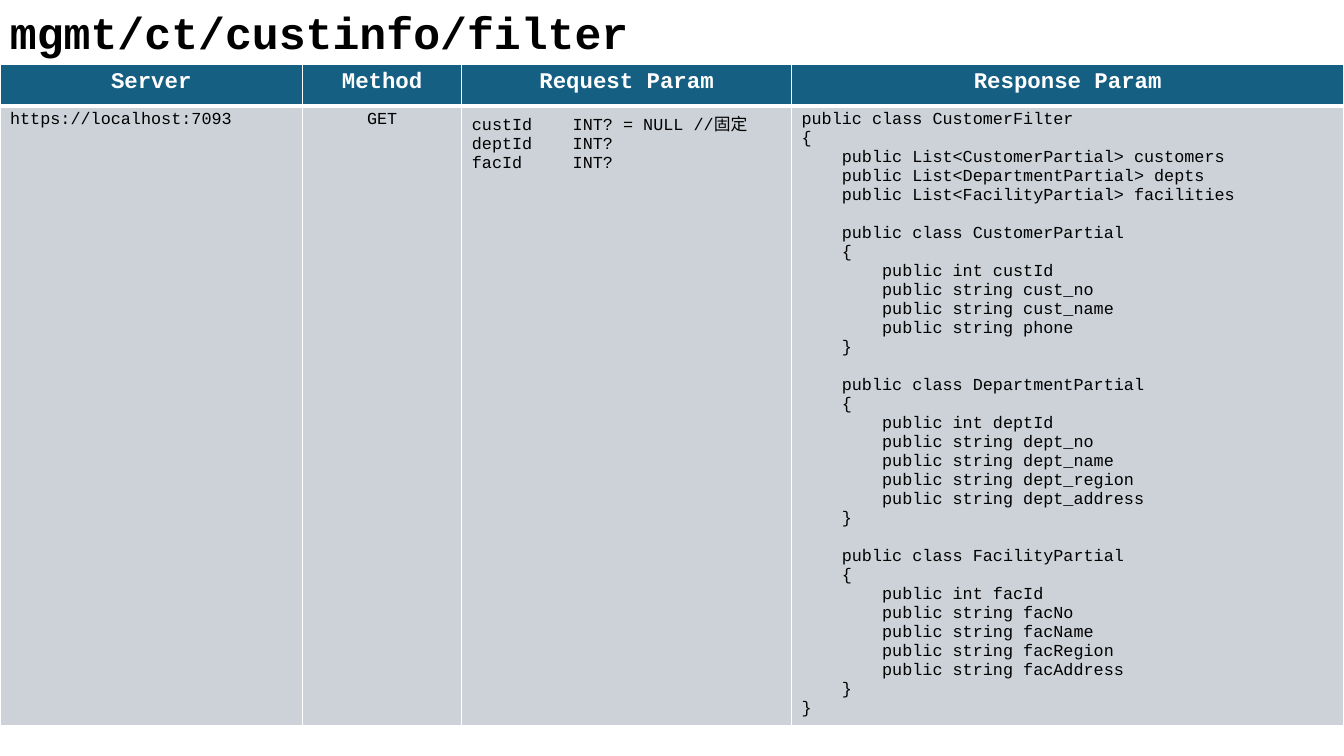
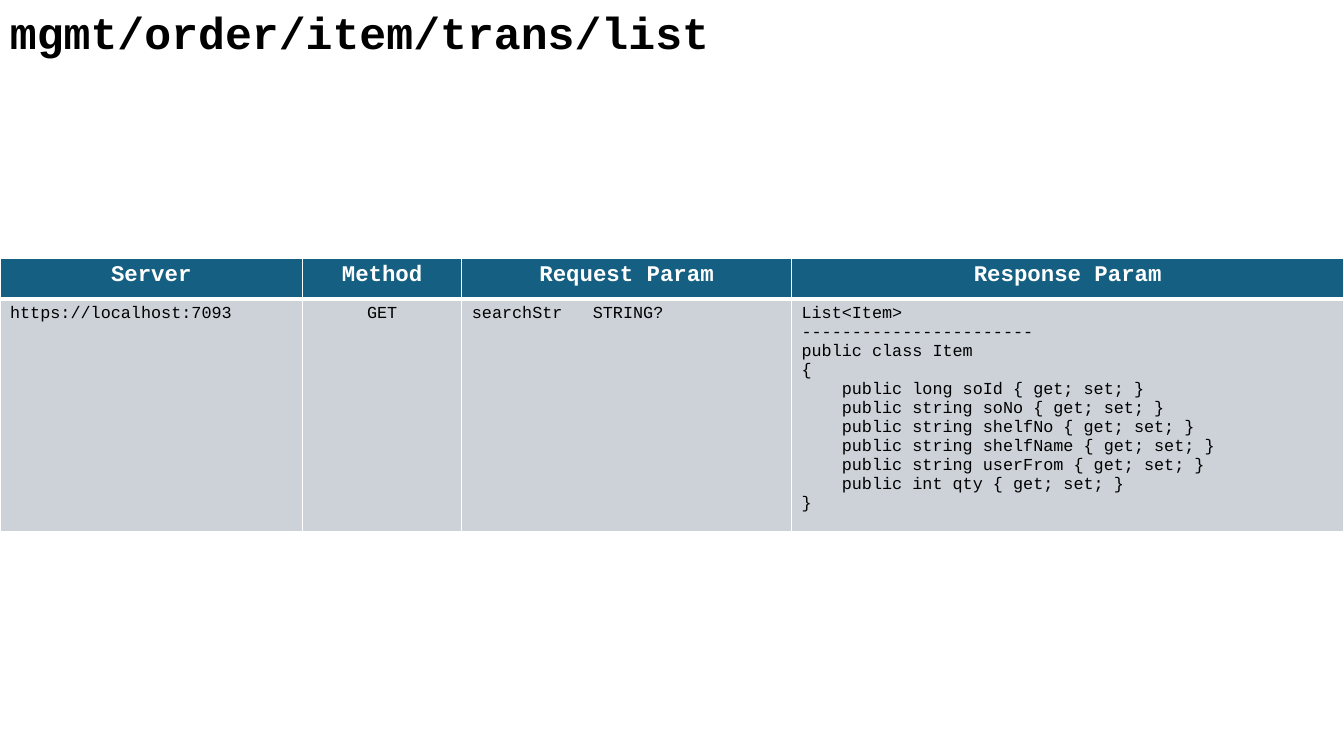
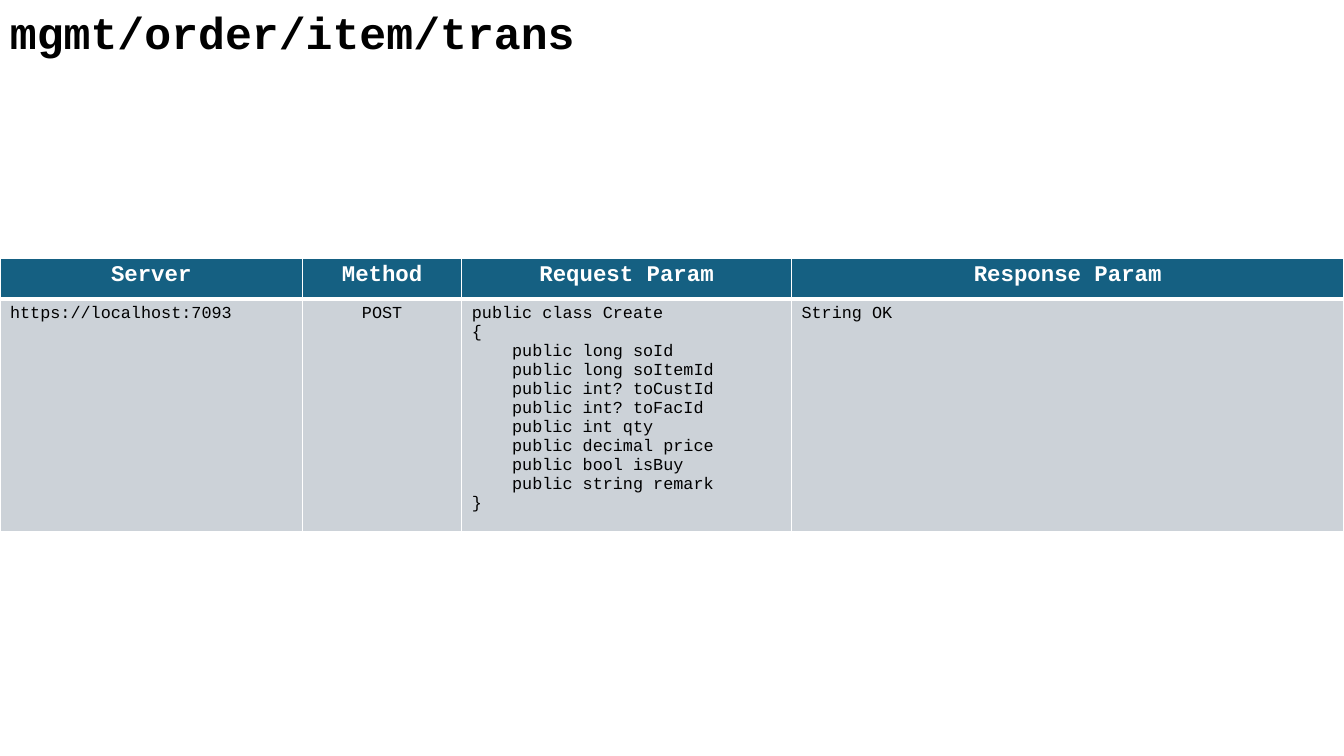
"""Build three API reference slides, each a path title over an endpoint table."""
from lxml.etree import SubElement
from pptx import Presentation
from pptx.dml.color import RGBColor
from pptx.enum.text import MSO_AUTO_SIZE, PP_ALIGN
from pptx.oxml.ns import qn
from pptx.util import Inches, Pt

WIDTH, HEIGHT = 13.33, 7.5
TITLE_HEIGHT, HEADER_HEIGHT = 0.64, 0.41
CELL_PADDING = 0.1
LINE_POINTS = 13.6
COLUMNS = [("Server", 3), ("Method", 1.58), ("Request Param", 3.27), ("Response Param", 5.48)]
CENTRED_COLUMN = 1
SERVER = "https://localhost:7093"
WHITE, BLACK, TEAL, GREY = "FFFFFF", "000000", "156082", "CCD2D8"
FONT = {"name": "Courier New"}
TITLE = {**FONT, "size": Pt(32), "bold": True}
HEADER = {**FONT, "size": Pt(16), "bold": True}
BODY = {**FONT, "size": Pt(12), "bold": False}
HEADER_EDGES = {"lnL": 1, "lnR": 1, "lnT": 1, "lnB": 3}
BODY_EDGES = {"lnL": 1, "lnR": 1, "lnT": 3, "lnB": 1}

FILTER_RESPONSE = """public class CustomerFilter
{
    public List<CustomerPartial> customers
    public List<DepartmentPartial> depts
    public List<FacilityPartial> facilities

    public class CustomerPartial
    {
        public int custId
        public string cust_no
        public string cust_name
        public string phone
    }

    public class DepartmentPartial
    {
        public int deptId
        public string dept_no
        public string dept_name
        public string dept_region
        public string dept_address
    }

    public class FacilityPartial
    {
        public int facId
        public string facNo
        public string facName
        public string facRegion
        public string facAddress
    }
}"""

ITEM_RESPONSE = """List<Item>
-----------------------
public class Item
{
    public long soId { get; set; }
    public string soNo { get; set; }
    public string shelfNo { get; set; }
    public string shelfName { get; set; }
    public string userFrom { get; set; }
    public int qty { get; set; }
}"""

CREATE_REQUEST = """public class Create
{
    public long soId
    public long soItemId
    public int? toCustId
    public int? toFacId
    public int qty
    public decimal price
    public bool isBuy
    public string remark
}"""

ENDPOINTS = [
    {"title": "mgmt/ct/custinfo/filter", "title_width": 6.39, "top": 0.64, "tab": 1.0,
     "cells": [SERVER, "GET",
               "custId\tINT? = NULL //固定\ndeptId\tINT?\nfacId\tINT?", FILTER_RESPONSE]},
    {"title": "mgmt/order/item/trans/list", "title_width": 9.12, "top": 2.56, "tab": 1.2,
     "cells": [SERVER, "GET", "searchStr\tSTRING?", ITEM_RESPONSE]},
    {"title": "mgmt/order/item/trans", "title_width": 9.12, "top": 2.56, "tab": 1.0,
     "cells": [SERVER, "POST", CREATE_REQUEST, "String OK"]},
]


def rgb(value):
    return RGBColor.from_string(value)


def write(frame, text, style, color, align=PP_ALIGN.LEFT, tab=1.0):
    """Write lines as paragraphs, turning an empty line into space before the next."""
    para, gap = frame.paragraphs[0], 0
    for index, line in enumerate(text.split("\n")):
        if not line:
            gap += LINE_POINTS
            continue
        if index:
            para = frame.add_paragraph()
        para.alignment = align
        if gap:
            para.space_before = Pt(gap)
            gap = 0
        if "\t" in line:
            stops = SubElement(para._p.get_or_add_pPr(), qn("a:tabLst"))
            SubElement(stops, qn("a:tab"), pos=str(Inches(tab)), algn="l")
        span = para.add_run()
        span.text = line
        for name, value in style.items():
            setattr(span.font, name, value)
        span.font.color.rgb = rgb(color)


def dress(cell, fill, edges):
    """Give a cell its white borders and its fill."""
    properties = cell._tc.get_or_add_tcPr()
    for edge, points in edges.items():
        line = SubElement(properties, qn(f"a:{edge}"), w=str(Pt(points)))
        SubElement(SubElement(line, qn("a:solidFill")), qn("a:srgbClr"), val=WHITE)
    cell.fill.solid()
    cell.fill.fore_color.rgb = rgb(fill)


def add_title(page, text, width):
    """Add the path title at the top left."""
    box = page.shapes.add_textbox(0, 0, Inches(width), Inches(TITLE_HEIGHT))
    box.text_frame.word_wrap = True
    box.text_frame.auto_size = MSO_AUTO_SIZE.SHAPE_TO_FIT_TEXT
    write(box.text_frame, text, TITLE, BLACK)


def add_endpoint(page, cells, top, tab):
    """Add the table with a header row and one endpoint row."""
    lines = max(text.count("\n") + 1 for text in cells)
    heights = [HEADER_HEIGHT, CELL_PADDING + lines * LINE_POINTS / 72]
    table = page.shapes.add_table(2, len(COLUMNS), 0, Inches(top), Inches(WIDTH),
                                  Inches(sum(heights))).table
    for row, height in zip(table.rows, heights):
        row.height = Inches(height)
    for index, ((heading, width), text) in enumerate(zip(COLUMNS, cells)):
        table.columns[index].width = Inches(width)
        header, body = table.cell(0, index), table.cell(1, index)
        dress(header, TEAL, HEADER_EDGES)
        dress(body, GREY, BODY_EDGES)
        write(header.text_frame, heading, HEADER, WHITE, PP_ALIGN.CENTER)
        align = PP_ALIGN.CENTER if index == CENTRED_COLUMN else PP_ALIGN.LEFT
        write(body.text_frame, text, BODY, BLACK, align, tab)


def main():
    deck = Presentation()
    deck.slide_width, deck.slide_height = Inches(WIDTH), Inches(HEIGHT)
    for endpoint in ENDPOINTS:
        page = deck.slides.add_slide(deck.slide_layouts[6])
        add_endpoint(page, endpoint["cells"], endpoint["top"], endpoint["tab"])
        add_title(page, endpoint["title"], endpoint["title_width"])
    deck.save("out.pptx")


if __name__ == "__main__":
    main()
